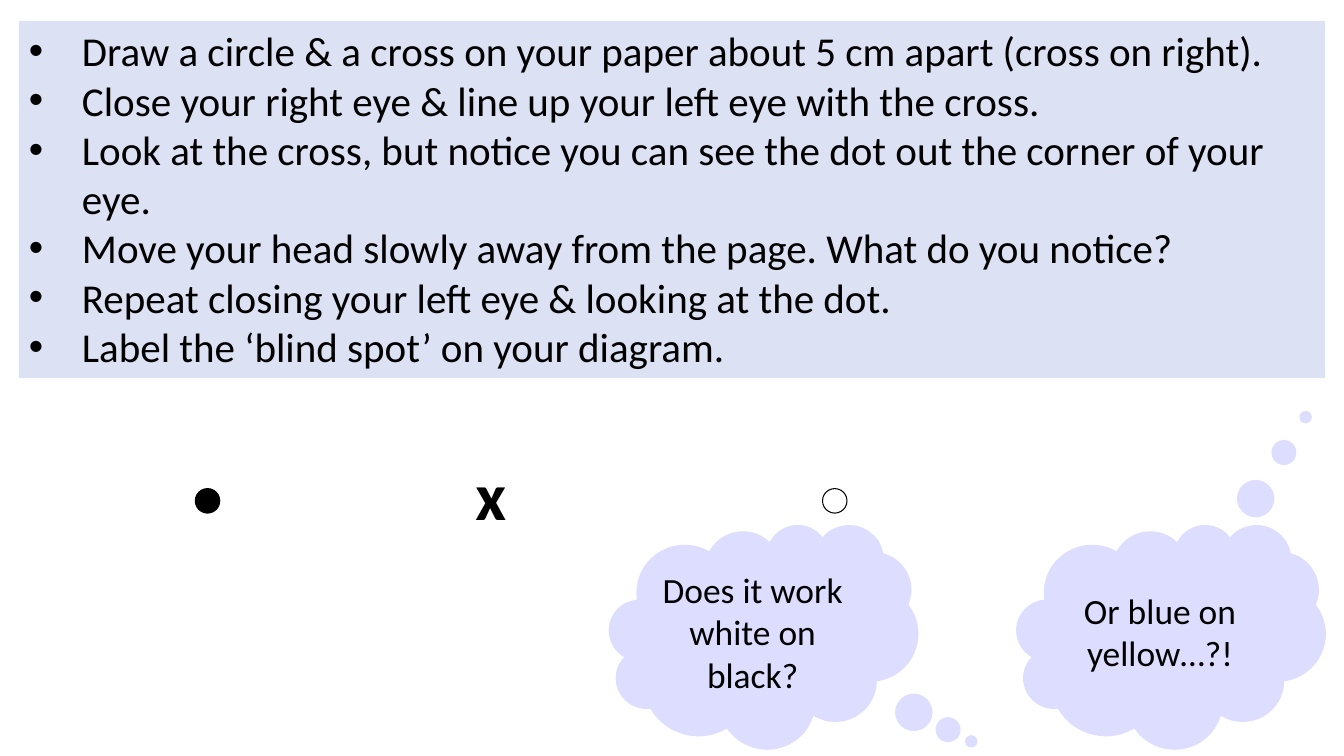
from pptx import Presentation
from pptx.dml.color import RGBColor
from pptx.enum.shapes import MSO_SHAPE
from pptx.enum.text import MSO_ANCHOR, PP_ALIGN
from pptx.oxml.xmlchemy import OxmlElement
from pptx.util import Pt


def add_filled(kind, left, top, width, height, fill, outline=None):
    shape = slide.shapes.add_shape(kind, Pt(left), Pt(top), Pt(width), Pt(height))
    shape.shadow.inherit = False
    shape.fill.solid()
    shape.fill.fore_color.rgb = RGBColor.from_string(fill)
    if outline:
        shape.line.color.rgb = RGBColor.from_string(outline)
        shape.line.width = Pt(0.75)
    else:
        shape.line.fill.background()
    return shape


def add_run(paragraph, text, size, bold=False):
    run = paragraph.add_run()
    run.text = text
    run.font.name = "Calibri"
    run.font.size = Pt(size)
    run.font.bold = bold
    run.font.color.rgb = RGBColor.from_string("000000")


presentation = Presentation()
presentation.slide_width = Pt(960)
presentation.slide_height = Pt(540)
slide = presentation.slides.add_slide(presentation.slide_layouts[6])

# Instructions
steps = [
    "Draw a circle & a cross on your paper about 5 cm apart (cross on right).",
    "Close your right eye & line up your left eye with the cross.",
    "Look at the cross, but notice you can see the dot out the corner of your eye.",
    "Move your head slowly away from the page. What do you notice?",
    "Repeat closing your left eye & looking at the dot.",
    "Label the ‘blind spot’ on your diagram.",
]
instructions = add_filled(MSO_SHAPE.ROUNDED_RECTANGLE, 13.5, 15, 933, 255, "DCE1F4")
instructions.adjustments[0] = 0
frame = instructions.text_frame
frame.word_wrap = True
frame.vertical_anchor = MSO_ANCHOR.TOP
for number, step in enumerate(steps):
    paragraph = frame.add_paragraph() if number else frame.paragraphs[0]
    paragraph.alignment = PP_ALIGN.LEFT
    properties = paragraph._p.get_or_add_pPr()
    properties.set("marL", str(Pt(38)))
    properties.set("indent", str(-Pt(38)))
    bullet_font = OxmlElement("a:buFont")
    bullet_font.set("typeface", "Arial")
    bullet = OxmlElement("a:buChar")
    bullet.set("char", "•")
    properties.extend([bullet_font, bullet])
    add_run(paragraph, step, 29.3)

# Blind spot test: black dot, cross and white dot
for left, fill in [(139.5, "000000"), (587.5, "FFFFFF")]:
    add_filled(MSO_SHAPE.OVAL, left, 349, 17.5, 17.5, fill, "000000")

cross = slide.shapes.add_textbox(Pt(332.5), Pt(320.5), Pt(51), Pt(65.5))
cross.text_frame.word_wrap = True
add_run(cross.text_frame.paragraphs[0], "x", 48, bold=True)

# Follow-up questions, each with the offset of its thought bubbles
questions = [
    (435, "Does it work white on black?", 0.671, 0.466),
    (726, "Or blue on yellow…?!", 0.435, -0.977),
]
for left, question, tail_x, tail_y in questions:
    cloud = add_filled(MSO_SHAPE.CLOUD_CALLOUT, left, 374.5, 221, 160.5, "DDDDFF")
    cloud.adjustments[0] = tail_x
    cloud.adjustments[1] = tail_y
    cloud.text_frame.word_wrap = True
    cloud.text_frame.vertical_anchor = MSO_ANCHOR.MIDDLE
    paragraph = cloud.text_frame.paragraphs[0]
    paragraph.alignment = PP_ALIGN.CENTER
    add_run(paragraph, question, 25.3)

presentation.save("out.pptx")
